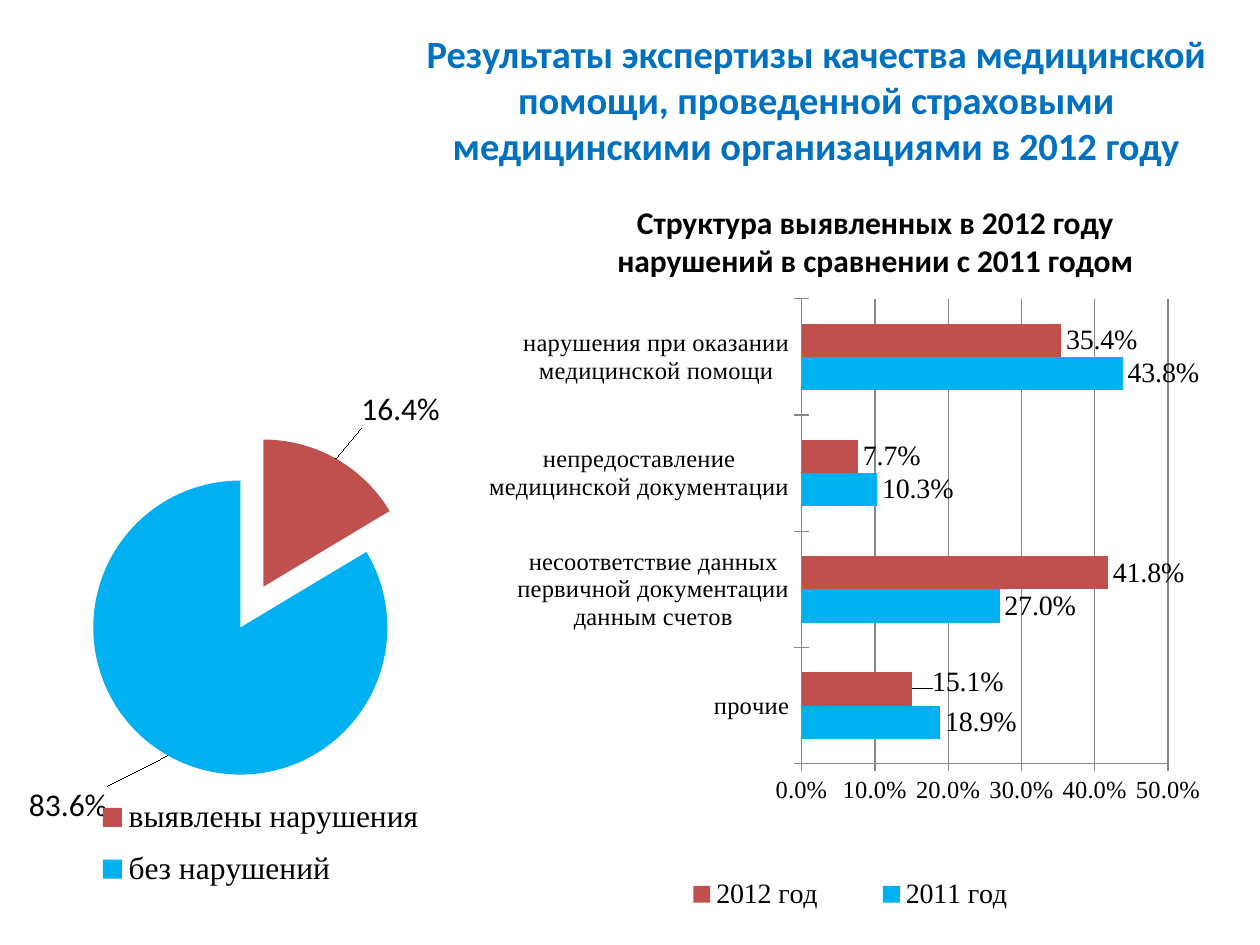
from lxml import etree
from pptx import Presentation
from pptx import util as u
from pptx.chart.data import CategoryChartData
from pptx.dml.color import RGBColor
from pptx.enum import chart as ch
from pptx.enum import text as t
from pptx.oxml.ns import qn

HUES = {"title": "0070C0", "ink": "000000", "red": "C0504D",
        "blue": "00B0F0", "grid": "868686"}
SANS, SERIF = "Calibri", "Times New Roman"


def hue(name):
    return RGBColor.from_string(HUES[name])


def style(font, size, face, color="ink", bold=False):
    font.size = u.Pt(size)
    font.name = face
    font.bold = bold
    font.color.rgb = hue(color)


def write(frame, words, size=18, face=SANS, color="ink", bold=True):
    para = frame.paragraphs[0]
    para.alignment = t.PP_ALIGN.CENTER
    run = para.add_run()
    run.text = words
    style(run.font, size, face, color, bold)


def place(node, spot, index, inner=False):
    for old in node.findall(qn("c:layout")):
        node.remove(old)
    outer = etree.Element(qn("c:layout"))
    box = etree.SubElement(outer, qn("c:manualLayout"))
    if inner:
        etree.SubElement(box, qn("c:layoutTarget")).set("val", "inner")
    if len(spot) == 4:
        for tag in ("xMode", "yMode"):
            etree.SubElement(box, qn("c:" + tag)).set("val", "edge")
    for tag, val in zip("xywh", spot):
        etree.SubElement(box, qn("c:" + tag)).set("val", str(val))
    node.insert(index, outer)


class Deck:
    def __init__(self):
        self.prs = Presentation()
        self.prs.slide_width, self.prs.slide_height = u.Pt(720), u.Pt(540)
        self.slide = self.prs.slides.add_slide(self.prs.slide_layouts[6])

    def text(self, words, box, anchor=t.MSO_ANCHOR.TOP, **form):
        frame = self.slide.shapes.add_textbox(*map(u.Pt, box)).text_frame
        frame.word_wrap = True
        frame.vertical_anchor = anchor
        write(frame, words, **form)

    def chart(self, kind, box, cats, rows, plot, key, size, face, keysize):
        data = CategoryChartData(number_format="0.0%")
        data.categories = cats
        for name, vals in rows:
            data.add_series(name, vals)
        chart = self.slide.shapes.add_chart(kind, *map(u.Pt, box), data).chart
        style(chart.font, size, face)
        chart.has_title = False
        chart.has_legend = True
        chart.legend.position = ch.XL_LEGEND_POSITION.RIGHT
        chart.legend.include_in_layout = False
        style(chart.legend.font, keysize, SERIF)
        place(chart.legend._element, key, 1)
        place(chart._chartSpace.chart.plotArea, plot, 0, inner=True)
        return chart

    def label(self, row, size, face, shifts):
        tags = row.data_labels
        tags.show_value = True
        tags.number_format = "0.0%"
        tags.number_format_is_linked = False
        tags.position = ch.XL_LABEL_POSITION.OUTSIDE_END
        style(tags.font, size, face)
        for i, shift in shifts.items():
            tag = row.points[i].data_label
            style(tag.font, size, face)
            tag.position = ch.XL_LABEL_POSITION.OUTSIDE_END
            place(tag._dLbl, shift, 1)

    def pie(self, box, cats, vals, colors, shifts, **form):
        chart = self.chart(ch.XL_CHART_TYPE.PIE, box, cats,
                           [("Series 1", vals)], **form)
        chart.plots[0].vary_by_categories = True
        row = chart.plots[0].series[0]
        burst = etree.Element(qn("c:explosion"))
        burst.set("val", "16")
        row._element.find(qn("c:tx")).addnext(burst)
        for i, color in enumerate(colors):
            fill = row.points[i].format.fill
            fill.solid()
            fill.fore_color.rgb = hue(color)
            blast = etree.Element(qn("c:explosion"))
            blast.set("val", "16")
            row._element.findall(qn("c:dPt"))[i].find(
                qn("c:spPr")).addprevious(blast)
        self.label(row, form["size"], form["face"], shifts)

    def bars(self, box, cats, rows, colors, shifts, **form):
        chart = self.chart(ch.XL_CHART_TYPE.BAR_CLUSTERED, box, cats,
                           rows, **form)
        plot = chart.plots[0]
        plot.vary_by_categories = False
        plot.gap_width, plot.overlap = 150, 0
        for row, color, shift in zip(plot.series, colors, shifts):
            row.format.fill.solid()
            row.format.fill.fore_color.rgb = hue(color)
            row.invert_if_negative = False
            self.label(row, 16, SERIF, shift)
        axis = chart.value_axis
        axis.minimum_scale, axis.maximum_scale = 0, 0.5
        axis.major_unit = 0.1
        axis.has_major_gridlines = True
        axis.tick_labels.number_format = "0.0%"
        axis.tick_labels.number_format_is_linked = False
        for side in (axis, chart.category_axis):
            side.major_tick_mark = ch.XL_TICK_MARK.CROSS
            side.format.line.color.rgb = hue("grid")
            style(side.tick_labels.font, form["size"], form["face"])
        axis.major_gridlines.format.line.color.rgb = hue("grid")


def main():
    deck = Deck()
    deck.text("Результаты экспертизы качества медицинской помощи, "
              "проведенной страховыми медицинскими организациями в 2012 году",
              (224.5, 11.5, 484, 90), t.MSO_ANCHOR.MIDDLE,
              size=22, color="title")
    deck.pie((16.5, 174, 250, 346), ["выявлены нарушения", "без нарушений"],
             (0.164, 0.836), ("red", "blue"),
             {0: (0.05, -0.04), 1: (-0.13, 0.04)},
             plot=(0.12, 0, 0.78, 1), key=(0.12, 0.79, 0.82, 0.2),
             size=18, face=SANS, keysize=18)
    deck.bars((270, 163.5, 427.5, 364),
              ["прочие",
               "несоответствие данных первичной документации данным счетов",
               "непредоставление медицинской документации",
               "нарушения при оказании медицинской помощи"],
              [("2011 год", (0.189, 0.27, 0.103, 0.438)),
               ("2012 год", (0.151, 0.418, 0.077, 0.354))],
              ("blue", "red"), ({}, {0: (0.02, -0.01)}),
              plot=(0.44, 0.02, 0.49, 0.73), key=(0.22, 0.92, 0.57, 0.07),
              size=14, face=SERIF, keysize=16)
    deck.text("Структура выявленных в 2012 году нарушений "
              "в сравнении с 2011 годом", (326, 112.5, 348.5, 51))
    deck.prs.save("out.pptx")


if __name__ == "__main__":
    main()
